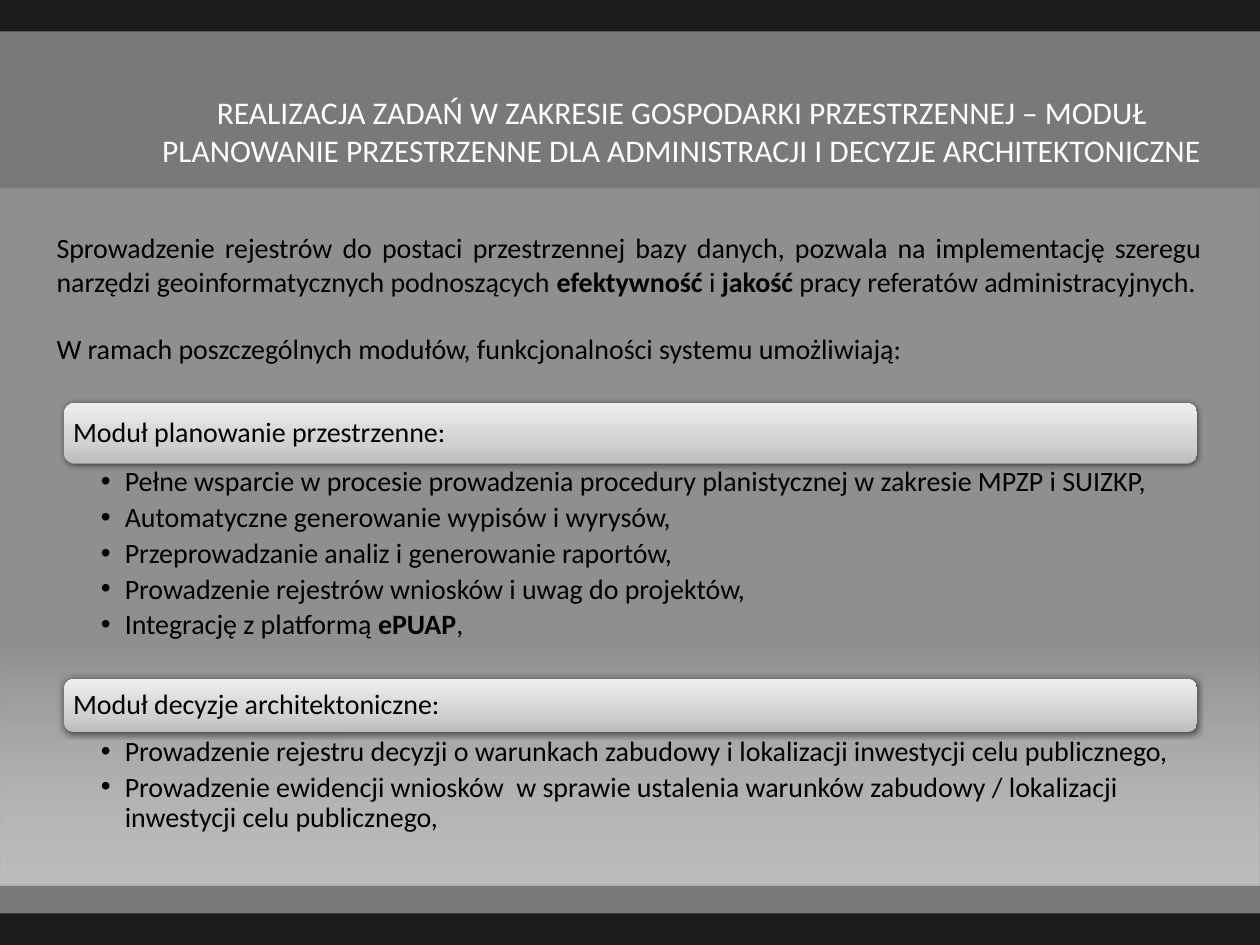
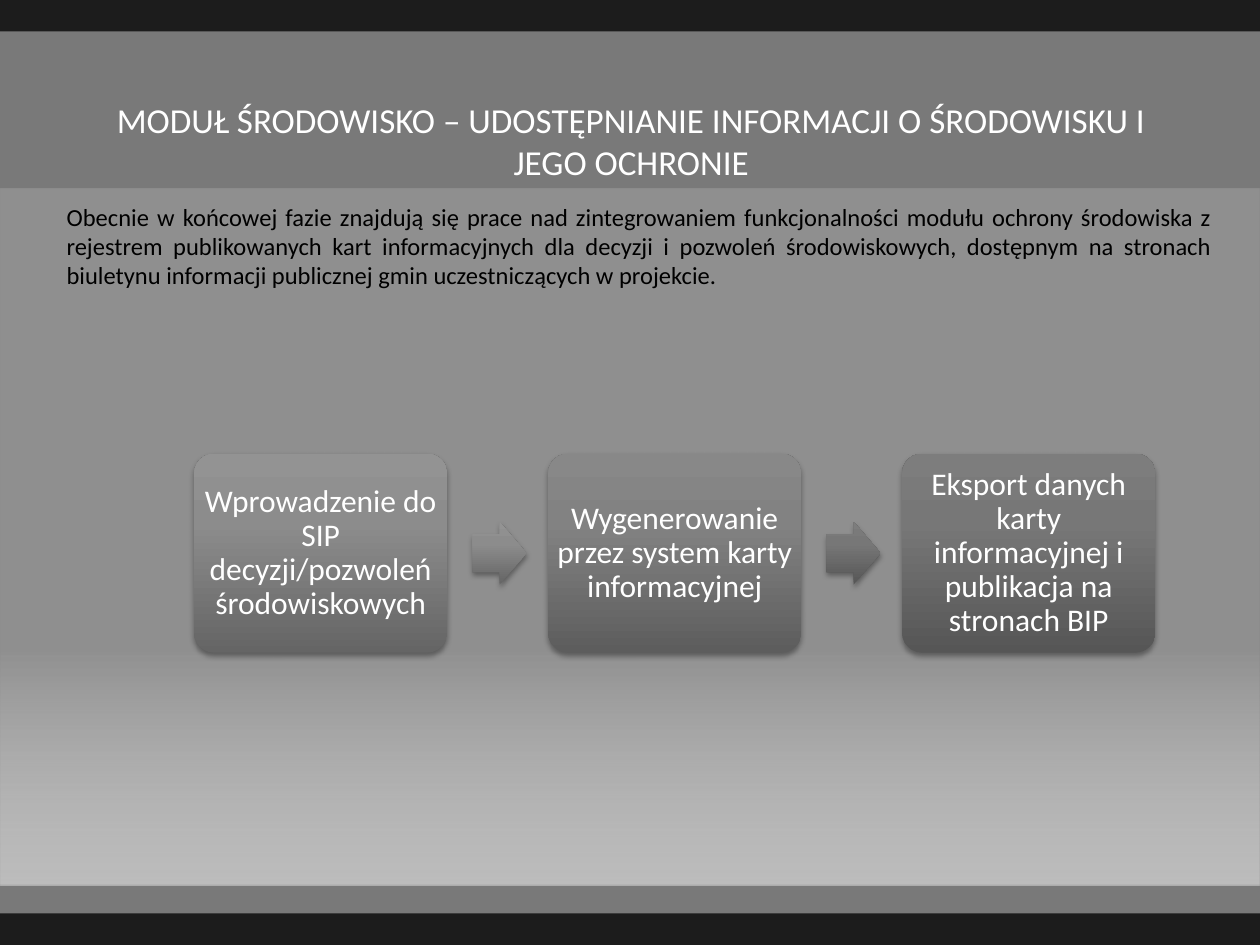
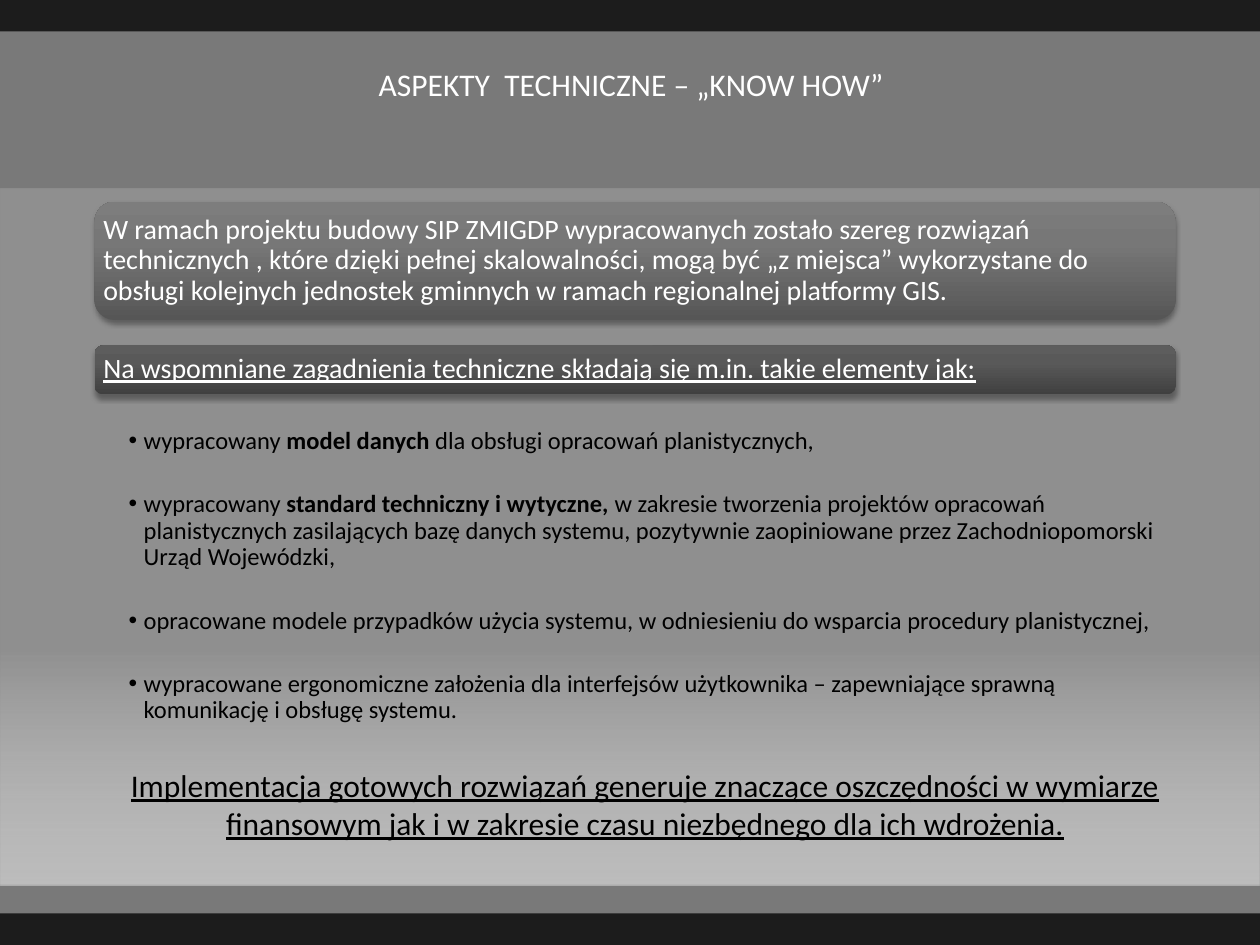
import pptx
import pptx.util
import pptx.dml.color
import pptx.enum.shapes
import pptx.enum.text
import pptx.oxml
import pptx.oxml.ns
from dataclasses import dataclass
from lxml import etree

SHAPE = pptx.enum.shapes.MSO_SHAPE
ALIGN = pptx.enum.text.PP_ALIGN
ANCHOR = pptx.enum.text.MSO_ANCHOR
qn = pptx.oxml.ns.qn
COLUMNS, ROWS = 100, 75
TITLE_ONLY = 5


@dataclass(frozen=True)
class Theme:
    font: str = "Calibri"
    ink: str = "000000"
    white: str = "FFFFFF"
    backdrop: str = "1C1C1C"
    small: int = 14
    body: int = 16
    large: int = 18
    title: int = 20
    tight: float = 0.9
    # Gradient stops: position, colour, opacity (percent)
    frame: tuple = ((0, "848484", 90), (100, "848484", 90))
    content: tuple = ((66, "969696", 79), (100, "FFFFFF", 50))
    silver: tuple = ((0, "BDBDBD", 100), (35, "D1D1D1", 100), (100, "EEEEEE", 100))
    light: tuple = ((0, "656565", 100), (65, "8C8C8C", 100), (100, "939393", 100))
    medium: tuple = ((0, "5D5D5D", 100), (65, "828282", 100), (100, "888888", 100))
    dark: tuple = ((0, "565656", 100), (65, "777777", 100), (100, "7D7D7D", 100))
    darkest: tuple = ((0, "404040", 100), (65, "595959", 100), (100, "5D5D5D", 100))
    # Shadows: opacity (percent), blur, distance (points)
    glow: tuple = (64, 4, 0)
    drop: tuple = (35, 3.1, 2)


def child(parent, tag, **attrs):
    e = etree.SubElement(parent, qn(tag))
    for name, value in attrs.items():
        e.set(name, str(value))
    return e


def add_color(parent, color, opacity):
    clr = child(parent, "a:srgbClr", val=color)
    child(clr, "a:alpha", val=opacity * 1000)


def set_gradient(s, stops, angle):
    s.fill.solid()
    spPr = s.element.spPr
    grad = pptx.oxml.parse_xml(
        f'<a:gradFill {pptx.oxml.ns.nsdecls("a")} rotWithShape="1"/>')
    gsLst = child(grad, "a:gsLst")
    for position, color, opacity in stops:
        add_color(child(gsLst, "a:gs", pos=position * 1000), color, opacity)
    child(grad, "a:lin", ang=angle * 60000, scaled=0)
    spPr.replace(spPr.find(qn("a:solidFill")), grad)


def set_shadow(s, opacity, blur, distance):
    effects = s.element.spPr.find(qn("a:effectLst"))
    shadow = child(effects, "a:outerShdw", blurRad=pptx.util.Pt(blur),
                   dist=pptx.util.Pt(distance), dir=90 * 60000, rotWithShape=0)
    add_color(shadow, "000000", opacity)


def set_bullet(p, indent):
    pPr = p._p.get_or_add_pPr()
    pPr.set("marL", str(indent))
    pPr.set("indent", str(-indent))
    child(pPr, "a:buFont", typeface="Arial")
    child(pPr, "a:buChar", char="•")


def set_text(tf, paragraphs, *, font, size, color, align=ALIGN.LEFT, anchor=ANCHOR.TOP,
             spacing=1.0, gap=0, underline=None, bullet=None, insets=None):
    """Fill a text frame; ** in a paragraph switches bold on and off."""
    tf.word_wrap = True
    tf.auto_size = pptx.enum.text.MSO_AUTO_SIZE.NONE
    tf.vertical_anchor = anchor
    if insets:
        tf.margin_left, tf.margin_top, tf.margin_right, tf.margin_bottom = insets
    for i, text in enumerate(paragraphs):
        p = tf.add_paragraph() if i else tf.paragraphs[0]
        p.alignment = align
        p.line_spacing = spacing
        p.space_before = pptx.util.Pt(gap if i else 0)
        if bullet:
            set_bullet(p, bullet)
        for k, part in enumerate(text.split("**")):
            if not part:
                continue
            r = p.add_run()
            r.text = part
            r.font.name = font
            r.font.size = pptx.util.Pt(size)
            r.font.color.rgb = pptx.dml.color.RGBColor.from_string(color)
            r.font.bold = k % 2 == 1
            r.font.underline = underline


class Deck:
    def __init__(self, prs, theme):
        self.prs, self.theme = prs, theme
        self.layout = prs.slide_layouts[TITLE_ONLY]
        self.slide = None

    def x(self, columns):
        return round(self.prs.slide_width * columns / COLUMNS)

    def y(self, rows):
        return round(self.prs.slide_height * rows / ROWS)

    def box(self, left, top, width, height):
        return self.x(left), self.y(top), self.x(width), self.y(height)

    def fill_text(self, tf, paragraphs, size, color=None, **style):
        set_text(tf, paragraphs, font=self.theme.font, size=size,
                 color=color or self.theme.ink, **style)

    def new_slide(self, title, place, size):
        first = self.slide is None
        self.slide = self.prs.slides.add_slide(self.layout)
        if first:
            self.dress_layout()
        s = self.slide.shapes.title
        s.left, s.top, s.width, s.height = self.box(*place)
        self.fill_text(s.text_frame, [title], size, self.theme.white,
                       align=ALIGN.CENTER, anchor=ANCHOR.BOTTOM)

    def dress_layout(self):
        """Put the backdrop and its two bands on the shared layout."""
        fill = self.layout.background.fill
        fill.solid()
        fill.fore_color.rgb = pptx.dml.color.RGBColor.from_string(self.theme.backdrop)
        bands = (((0, 2.5, 100, 70), self.theme.frame),
                 ((0, 15, 100, 55.3), self.theme.content))
        for i, (place, stops) in enumerate(bands):
            band = self.shape(SHAPE.RECTANGLE, place, stops, angle=90)
            band.element.nvSpPr.cNvPr.set("id", str(100 + i))
            self.layout.shapes.element.insert(2 + i, band.element)

    def shape(self, kind, place, stops, angle=270, shadow=None, adjust=()):
        s = self.slide.shapes.add_shape(kind, *self.box(*place))
        for i, value in enumerate(adjust):
            s.adjustments[i] = value
        s.line.fill.background()
        s.shadow.inherit = False
        set_gradient(s, stops, angle)
        if shadow:
            set_shadow(s, *shadow)
        return s

    def panel(self, text, place, stops, shadow, size, color, corner=0.17, **style):
        s = self.shape(SHAPE.ROUNDED_RECTANGLE, place, stops, shadow=shadow,
                       adjust=[corner])
        # The rounded corners already push the text in by 0.29 of their radius
        inset = max(0, self.x(0.7) - round(0.29 * corner * min(s.width, s.height)))
        self.fill_text(s.text_frame, [text], size, color, anchor=ANCHOR.MIDDLE,
                       spacing=self.theme.tight, insets=[inset] * 4, **style)

    def text(self, paragraphs, place, size, **style):
        s = self.slide.shapes.add_textbox(*self.box(*place))
        self.fill_text(s.text_frame, paragraphs, size, **style)

    def bullets(self, items, place, size, indent, left, right, gap):
        self.text(items, place, size, spacing=self.theme.tight, gap=gap,
                  bullet=self.x(indent),
                  insets=(self.x(left), self.y(0.2), self.x(right), self.y(0.2)))

    def arrow(self, place, stops):
        self.shape(SHAPE.RIGHT_ARROW, place, stops, shadow=self.theme.drop,
                   adjust=(0.6, 0.5))


def planning_slide(deck):
    t = deck.theme
    deck.new_slide("REALIZACJA ZADAŃ W ZAKRESIE GOSPODARKI PRZESTRZENNEJ – MODUŁ "
                   "PLANOWANIE PRZESTRZENNE DLA ADMINISTRACJI I DECYZJE ARCHITEKTONICZNE",
                   (9.1, 4.3, 90, 9.6), t.large)
    deck.text(["Sprowadzenie rejestrów do postaci przestrzennej bazy danych, pozwala na "
               "implementację szeregu narzędzi geoinformatycznych podnoszących "
               "**efektywność **i **jakość** pracy referatów administracyjnych.",
               "W ramach poszczególnych modułów, funkcjonalności systemu umożliwiają:"],
              (3.5, 17.8, 92.9, 19.9), t.body, align=ALIGN.JUSTIFY, gap=19.5)
    modules = (
        ("Moduł planowanie przestrzenne:", 32, 4.8, 36.9, 14.1,
         ["Pełne wsparcie w procesie prowadzenia procedury planistycznej w zakresie "
          "MPZP i SUIZKP,",
          "Automatyczne generowanie wypisów i wyrysów,",
          "Przeprowadzanie analiz i generowanie raportów,",
          "Prowadzenie rejestrów wniosków i uwag do projektów,",
          "Integrację z platformą **ePUAP**,"]),
        ("Moduł decyzje architektoniczne:", 53.9, 4.2, 58.3, 7.9,
         ["Prowadzenie rejestru decyzji o warunkach zabudowy i lokalizacji inwestycji "
          "celu publicznego,",
          "Prowadzenie ewidencji wniosków  w sprawie ustalenia warunków zabudowy / "
          "lokalizacji inwestycji celu publicznego,"]),
    )
    for heading, top, height, list_top, list_height, items in modules:
        deck.panel(heading, (5.1, top, 89.9, height), t.silver, t.glow, t.body, t.ink)
        deck.bullets(items, (5.1, list_top, 89.9, list_height), t.body,
                     indent=1.9, left=2.9, right=1.2, gap=3.2)


def environment_slide(deck):
    t = deck.theme
    deck.new_slide("MODUŁ ŚRODOWISKO – UDOSTĘPNIANIE INFORMACJI O ŚRODOWISKU I JEGO OCHRONIE",
                   (5.1, 4.4, 90, 10.6), t.title)
    deck.text(["Obecnie w końcowej fazie znajdują się prace nad zintegrowaniem "
               "funkcjonalności modułu ochrony środowiska z rejestrem publikowanych kart "
               "informacyjnych dla decyzji i pozwoleń środowiskowych, dostępnym na stronach "
               "biuletynu informacji publicznej gmin uczestniczących w projekcie."],
              (4.3, 15.5, 92.9, 8.1), t.small, align=ALIGN.JUSTIFY)
    first, pitch = 15.4, 28.1
    steps = (("Wprowadzenie do SIP decyzji/pozwoleń środowiskowych", t.light),
             ("Wygenerowanie przez system karty informacyjnej", t.medium),
             ("Eksport danych karty informacyjnej i publikacja na stronach BIP", t.dark))
    for i, (step, stops) in enumerate(steps):
        deck.panel(step, (first + pitch * i, 36, 20.1, 15.8), stops, t.drop, t.large,
                   t.white, corner=0.1, align=ALIGN.CENTER)
    for i, stops in enumerate((t.light, t.dark)):
        deck.arrow((first + 22.1 + pitch * i, 41.4, 4.3, 5), stops)


def know_how_slide(deck):
    t = deck.theme
    deck.new_slide("ASPEKTY  TECHNICZNE – „KNOW HOW”", (5.1, 2.9, 90, 5.8), t.large)
    deck.panel("W ramach projektu budowy SIP ZMIGDP wypracowanych zostało szereg rozwiązań "
               "technicznych , które dzięki pełnej skalowalności, mogą być „z miejsca” "
               "wykorzystane do obsługi kolejnych jednostek gminnych w ramach regionalnej "
               "platformy GIS.",
               (7.5, 16, 85.8, 9.4), t.dark, t.drop, t.body, t.white)
    deck.panel("Na wspomniane zagadnienia techniczne składają się m.in. takie elementy jak:",
               (7.5, 27.4, 85.8, 3.9), t.darkest, t.drop, t.body, t.white, underline=True)
    deck.bullets(["wypracowany **model danych **dla obsługi opracowań planistycznych,",
                  "wypracowany **standard techniczny i wytyczne, **w zakresie tworzenia "
                  "projektów opracowań planistycznych zasilających bazę danych systemu, "
                  "pozytywnie zaopiniowane przez Zachodniopomorski Urząd Wojewódzki,",
                  "opracowane modele przypadków użycia systemu, w odniesieniu do wsparcia "
                  "procedury planistycznej,",
                  "wypracowane ergonomiczne założenia dla interfejsów użytkownika – "
                  "zapewniające sprawną komunikację i obsługę systemu."],
                 (7.5, 33.8, 85.8, 23.6), t.small, indent=1.2, left=2.7, right=1.1, gap=21)
    deck.text(["Implementacja gotowych rozwiązań generuje znaczące oszczędności w wymiarze "
               "finansowym jak i w zakresie czasu niezbędnego dla ich wdrożenia."],
              (6.7, 60.3, 89, 7.1), t.large, align=ALIGN.CENTER, underline=True)


def main():
    prs = pptx.Presentation()
    prs.slide_width = pptx.util.Inches(10)
    prs.slide_height = pptx.util.Inches(7.5)
    deck = Deck(prs, Theme())
    planning_slide(deck)
    environment_slide(deck)
    know_how_slide(deck)
    prs.save("out.pptx")


if __name__ == "__main__":
    main()
